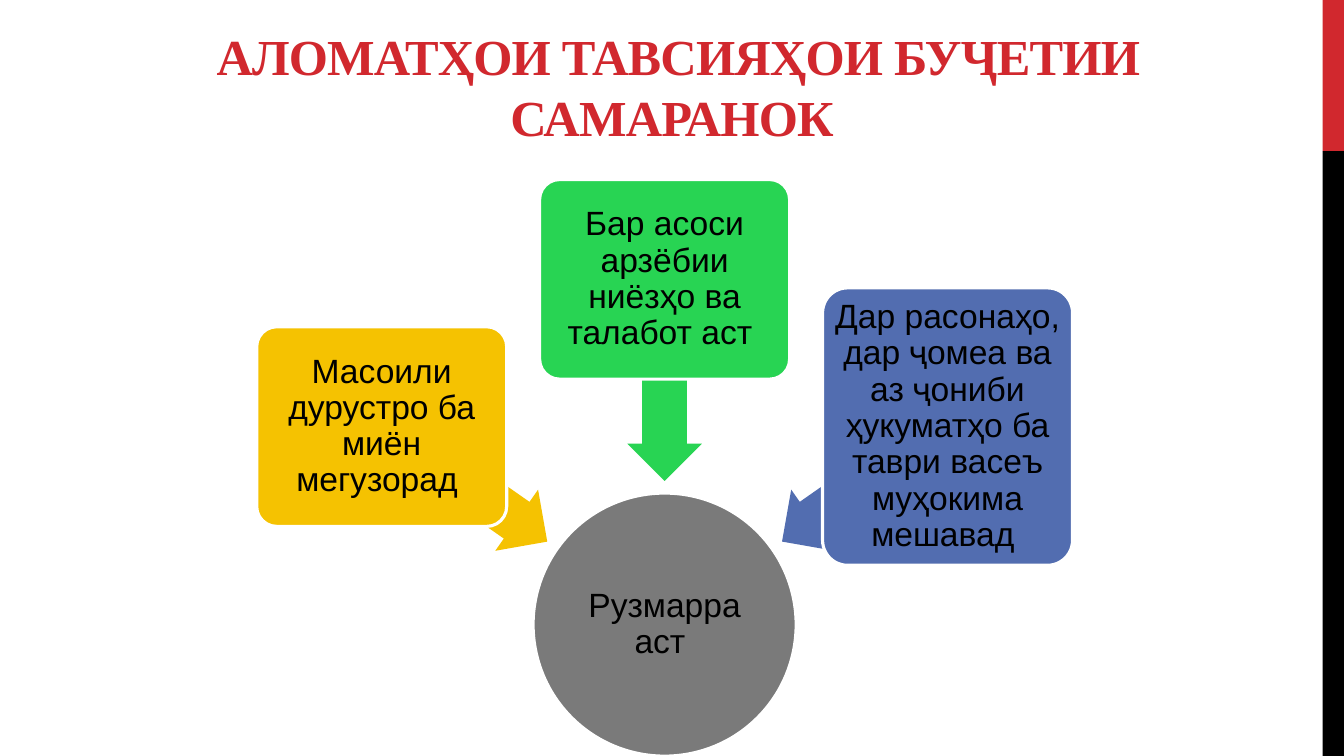
from pptx import Presentation
from pptx import util as u
from pptx.dml.color import RGBColor
from pptx.enum import shapes, text

RED = RGBColor(0xD1, 0x28, 0x2E)
BLACK = RGBColor(0, 0, 0)
WHITE = RGBColor(0xFF, 0xFF, 0xFF)
GRAY = RGBColor(0x7A, 0x7A, 0x7A)
YELLOW = RGBColor(0xF5, 0xC2, 0x01)
GREEN = RGBColor(0x28, 0xD4, 0x53)
BLUE = RGBColor(0x52, 0x6D, 0xB0)

SHAPE = shapes.MSO_SHAPE
WIDTH, HEIGHT = 33.87, 19.05
CENTER = 16.75


class SlideBuilder:
    """Draws styled elements on the current slide, in centimetres."""

    title_format = {"name": "Times New Roman", "size": u.Pt(36), "bold": True}
    body_format = {"name": "Arial", "size": u.Pt(24), "bold": False}

    def __init__(self, deck):
        self.slide = deck.slides.add_slide(deck.slide_layouts[5])

    def add_words(self, frame, words, formats, color):
        para = frame.paragraphs[0]
        para.alignment = text.PP_ALIGN.CENTER
        span = para.add_run()
        span.text = words
        for name, value in formats.items():
            setattr(span.font, name, value)
        span.font.color.rgb = color
        return para, span

    def title(self, words, left, top, width, height):
        box = self.slide.shapes.title
        place = {"left": left, "top": top, "width": width, "height": height}
        for name, value in place.items():
            setattr(box, name, u.Cm(value))
        frame = box.text_frame
        frame.auto_size = text.MSO_AUTO_SIZE.NONE
        frame.vertical_anchor = text.MSO_ANCHOR.BOTTOM
        span = self.add_words(frame, words, self.title_format, RED)[1]
        span.font._element.set("spc", "-60")

    def shape(self, kind, x, y, width, height, fill):
        shape = self.slide.shapes.add_shape(
            kind, u.Cm(x - width / 2), u.Cm(y - height / 2), u.Cm(width), u.Cm(height))
        shape.shadow.inherit = False
        shape.fill.solid()
        shape.fill.fore_color.rgb = fill
        shape.line.fill.background()
        return shape

    def arrow(self, x, y, angle, fill):
        arrow = self.shape(SHAPE.LEFT_ARROW, x, y, 5.08, 1.88, fill)
        arrow.adjustments[0] = 0.6
        arrow.rotation = angle

    def label(self, kind, x, y, width, height, fill, words, inset):
        box = self.shape(kind, x, y, width, height, fill)
        box.line.color.rgb = WHITE
        box.line.width = u.Pt(2.25)
        frame = box.text_frame
        frame.word_wrap = True
        frame.vertical_anchor = text.MSO_ANCHOR.MIDDLE
        for side in ("left", "top", "right", "bottom"):
            setattr(frame, f"margin_{side}", u.Cm(inset))
        para = self.add_words(frame, words, self.body_format, BLACK)[0]
        para.line_spacing = 0.9
        return box

    def card(self, x, y, height, fill, words):
        box = self.label(SHAPE.ROUNDED_RECTANGLE, x, y, 6.3, height, fill, words, 0.13)
        box.adjustments[0] = 0.1


def main():
    deck = Presentation()
    deck.slide_width, deck.slide_height = u.Cm(WIDTH), u.Cm(HEIGHT)
    page = SlideBuilder(deck)

    stripe, split = 0.54, 3.81
    for top, bottom, fill in ((0, split, RED), (split, HEIGHT, BLACK)):
        page.shape(SHAPE.RECTANGLE, WIDTH - stripe / 2, (top + bottom) / 2,
                   stripe, bottom - top, fill)

    page.title("АЛОМАТҲОИ ТАВСИЯҲОИ БУҶЕТИИ САМАРАНОК ", 1.63, 0, 30.91, split)
    page.label(SHAPE.OVAL, CENTER, 15.74, 6.63, 6.63, GRAY, "Рузмарра аст ", 0.05)

    signs = (
        (-1, 12.19, 215, 10.75, 5.03, YELLOW, "Масоили дурустро ба миён мегузорад "),
        (0, 9.58, 270, 7.04, 5.03, GREEN, "Бар асоси арзёбии ниёзҳо ва талабот аст "),
        (1, 12.19, 325, 10.75, 6.99, BLUE,
         "Дар расонаҳо, дар ҷомеа ва аз ҷониби ҳукуматҳо ба таври васеъ муҳокима мешавад "),
    )
    for side, arrow_y, angle, card_y, height, fill, words in signs:
        page.arrow(CENTER + side * 5.04, arrow_y, angle, fill)
        page.card(CENTER + side * 7.13, card_y, height, fill, words)

    deck.save("out.pptx")


if __name__ == "__main__":
    main()
